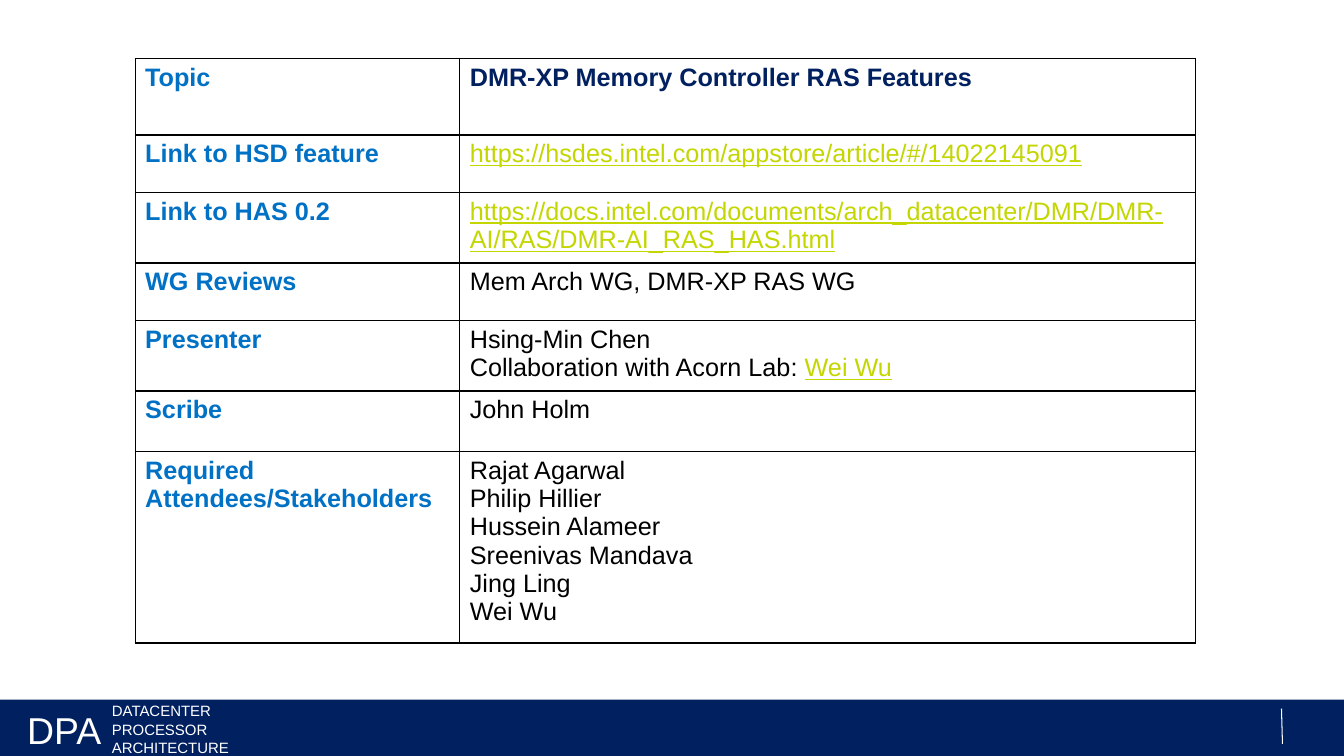
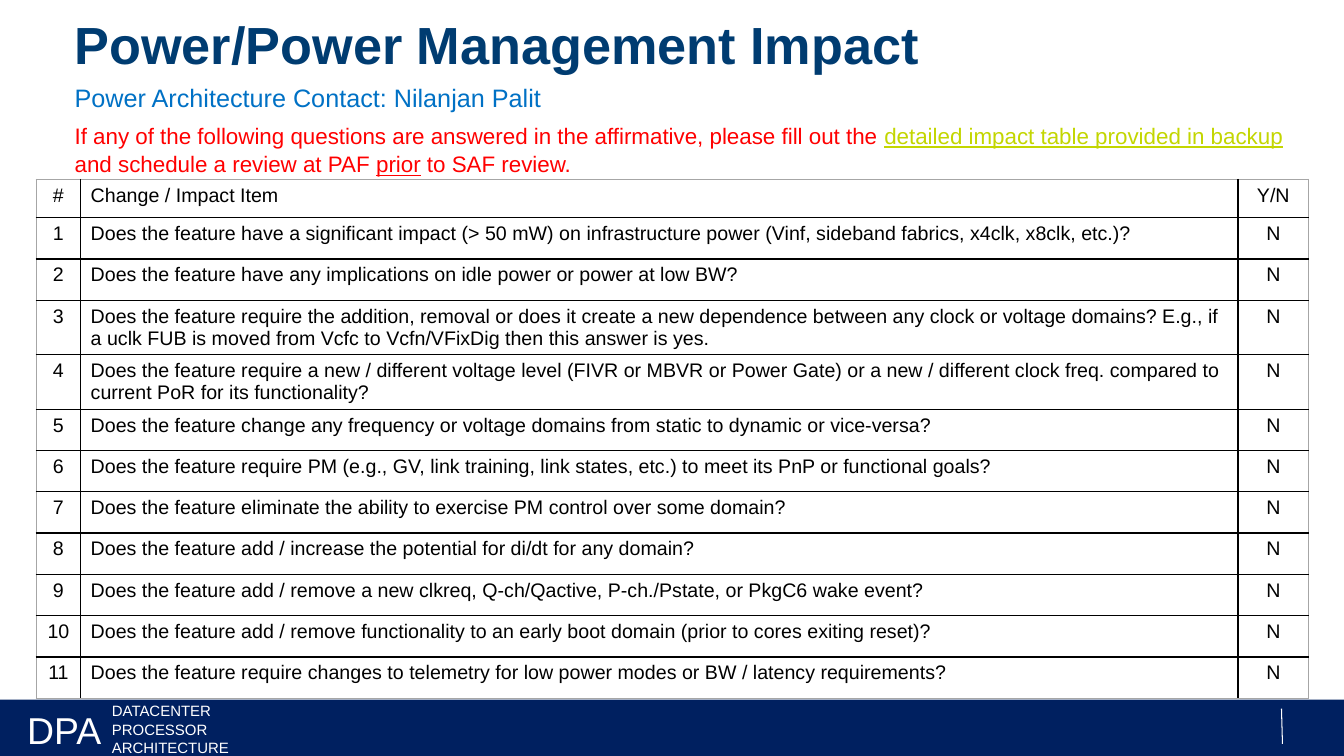
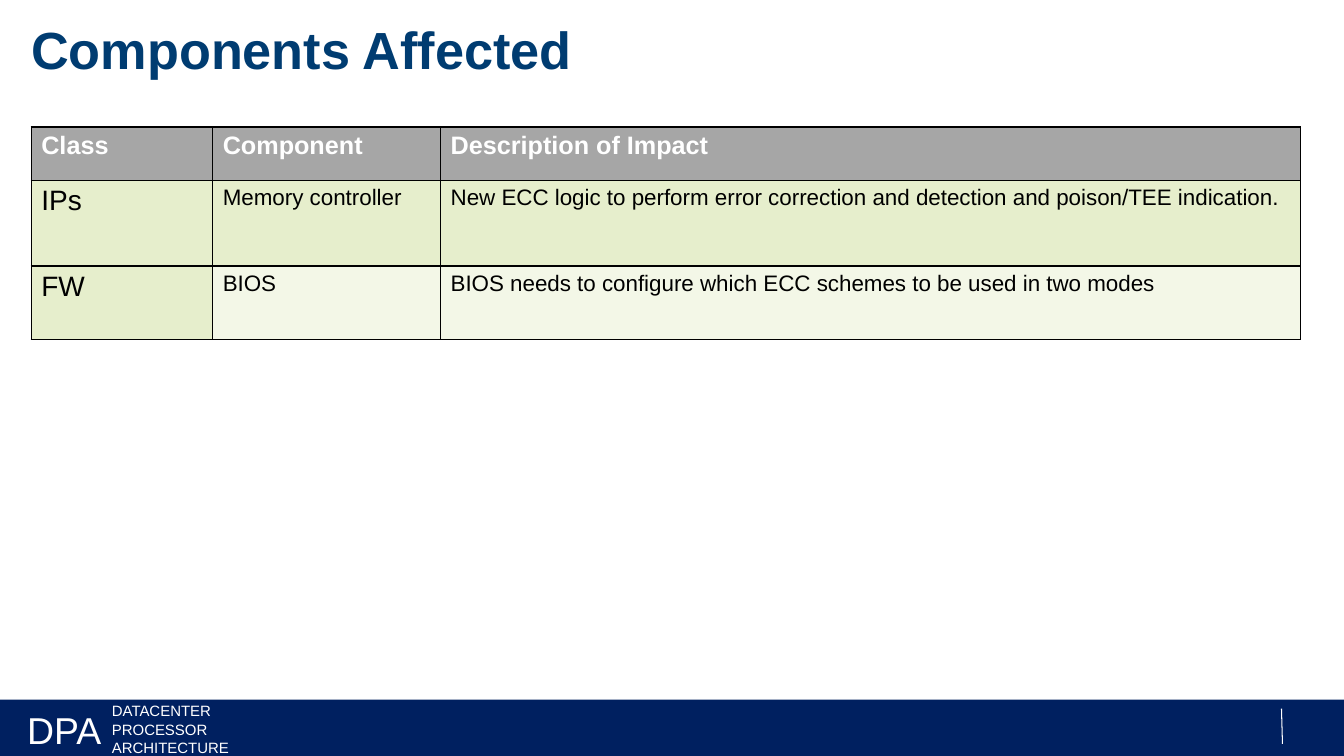
from dataclasses import dataclass

from lxml.etree import SubElement
from pptx import Presentation
from pptx.dml.color import RGBColor
from pptx.enum.shapes import MSO_CONNECTOR, MSO_SHAPE
from pptx.enum.text import MSO_ANCHOR, MSO_AUTO_SIZE, PP_ALIGN
from pptx.oxml.ns import qn
from pptx.util import Inches, Pt

WHITE = RGBColor(0xFF, 0xFF, 0xFF)
BLACK = RGBColor(0x00, 0x00, 0x00)
NAVY = RGBColor(0x00, 0x20, 0x60)
TITLE_BLUE = RGBColor(0x00, 0x3C, 0x71)
BLUE = RGBColor(0x00, 0x71, 0xC5)
RED = RGBColor(0xFF, 0x00, 0x00)
LIME = RGBColor(0xC3, 0xD6, 0x00)
GREY = RGBColor(0xA6, 0xA6, 0xA6)
GREEN = RGBColor(0xE6, 0xEE, 0xCC)
PALE_GREEN = RGBColor(0xF3, 0xF7, 0xE7)

FONT = "Arial"
LINE_SPACING = 1.05
TITLE_ONLY, TITLE_AND_BODY, BLANK = 5, 1, 6


@dataclass
class Span:
    """A stretch of text in one style."""
    text: str
    size: float = 18
    color: RGBColor = BLACK
    bold: bool = False
    underline: bool = False


@dataclass
class Cell:
    """A table cell: paragraphs of spans, alignment and fill."""
    paragraphs: list
    align: PP_ALIGN = PP_ALIGN.LEFT
    fill: RGBColor = None


class Deck:
    """Holds the shared style and the current slide."""

    def __init__(self):
        self.prs = Presentation()
        self.prs.slide_width = Inches(13.33)
        self.prs.slide_height = Inches(7.5)
        self.slide = None

    def new_slide(self, layout):
        self.slide = self.prs.slides.add_slide(self.prs.slide_layouts[layout])
        self.footer()

    def footer(self):
        shapes = self.slide.shapes
        band = shapes.add_shape(MSO_SHAPE.RECTANGLE, 0, Inches(6.94), Inches(13.33), Inches(0.56))
        band.shadow.inherit = False
        band.fill.solid()
        band.fill.fore_color.rgb = NAVY
        band.line.fill.background()
        self.label(1.11, 6.95, 1.82, 0.54, Span("DATACENTER PROCESSOR ARCHITECTURE", 10.7, WHITE))
        self.label(0.27, 6.99, 1.02, 0.45, Span("DPA", 26.7, WHITE))
        divider = shapes.add_connector(
            MSO_CONNECTOR.STRAIGHT, Inches(12.71), Inches(7.03), Inches(12.72), Inches(7.38))
        divider.line.color.rgb = WHITE
        divider.line.width = Pt(0.75)
        SubElement(divider._element.spPr, qn("a:effectLst"))

    def label(self, left, top, width, height, span):
        box = self.slide.shapes.add_textbox(Inches(left), Inches(top), Inches(width), Inches(height))
        self.set_text(self.plain(box.text_frame), [[span]], LINE_SPACING)

    def title(self, text, left, top, width, height):
        frame = self.place(self.slide.shapes.title, left, top, width, height)
        self.set_text(frame, [[Span(text, 37.3, TITLE_BLUE, bold=True)]], LINE_SPACING)

    def body(self, paragraphs, left, top, width, height):
        frame = self.place(self.slide.placeholders[1], left, top, width, height)
        self.set_text(frame, paragraphs, LINE_SPACING)
        for index, paragraph in enumerate(frame.paragraphs):
            props = paragraph._p.get_or_add_pPr()
            props.set("marL", "0")
            props.set("indent", "0")
            SubElement(props, qn("a:buNone"))
            paragraph.space_before = Pt(6 if index else 0)

    def place(self, holder, left, top, width, height):
        holder.left, holder.top = Inches(left), Inches(top)
        holder.width, holder.height = Inches(width), Inches(height)
        return self.plain(holder.text_frame)

    def plain(self, frame):
        frame.margin_left = frame.margin_right = frame.margin_top = frame.margin_bottom = 0
        frame.word_wrap = True
        frame.auto_size = MSO_AUTO_SIZE.NONE
        frame.vertical_anchor = MSO_ANCHOR.TOP
        return frame

    def set_text(self, frame, paragraphs, spacing=1.0, align=PP_ALIGN.LEFT):
        for index, spans in enumerate(paragraphs):
            paragraph = frame.add_paragraph() if index else frame.paragraphs[0]
            paragraph.alignment = align
            paragraph.line_spacing = spacing
            for span in spans:
                run = paragraph.add_run()
                run.text = span.text
                font = run.font
                font.name, font.size = FONT, Pt(span.size)
                font.bold, font.underline = span.bold, span.underline
                font.color.rgb = span.color

    def table(self, left, top, widths, heights, rows, outline=BLACK):
        table = self.slide.shapes.add_table(
            len(rows), len(widths), Inches(left), Inches(top),
            Inches(sum(widths)), Inches(sum(heights))).table
        table.first_row = table.horz_banding = False
        for column, width in zip(table.columns, widths):
            column.width = Inches(width)
        for row, height in zip(table.rows, heights):
            row.height = Inches(height)
        for r, row in enumerate(rows):
            for c, content in enumerate(row):
                cell = table.cell(r, c)
                outer = {"L": c == 0, "R": c == len(row) - 1, "T": r == 0, "B": r == len(rows) - 1}
                for side, on_edge in outer.items():
                    self.border(cell, side, outline if on_edge else BLACK)
                if content.fill is None:
                    cell.fill.background()
                else:
                    cell.fill.solid()
                    cell.fill.fore_color.rgb = content.fill
                self.set_text(cell.text_frame, content.paragraphs, align=content.align)

    def border(self, cell, side, color):
        line = SubElement(cell._tc.get_or_add_tcPr(), qn(f"a:ln{side}"), w=str(Pt(1)))
        SubElement(SubElement(line, qn("a:solidFill")), qn("a:srgbClr"), val=str(color))


def topic_slide(deck):
    """Build the review summary."""
    attendees = ["Rajat Agarwal", "Philip Hillier", "Hussein Alameer",
                 "Sreenivas Mandava", "Jing Ling", "Wei Wu"]
    has_link = "https://docs.intel.com/documents/arch_datacenter/DMR/DMR-AI/RAS/DMR-AI_RAS_HAS.html"
    hsd_link = "https://hsdes.intel.com/appstore/article/#/14022145091"
    entries = [
        ("Topic", [[Span("DMR-XP Memory Controller RAS Features", color=NAVY, bold=True)]]),
        ("Link to HSD feature", [[Span(hsd_link, color=LIME, underline=True)]]),
        ("Link to HAS 0.2", [[Span(has_link, color=LIME, underline=True)]]),
        ("WG Reviews", [[Span("Mem Arch WG, DMR-XP RAS WG")]]),
        ("Presenter", [[Span("Hsing-Min Chen")],
                       [Span("Collaboration with Acorn Lab: "),
                        Span("Wei Wu", color=LIME, underline=True)]]),
        ("Scribe", [[Span("John Holm")]]),
        ("Required Attendees/Stakeholders", [[Span(name)] for name in attendees]),
    ]
    deck.new_slide(BLANK)
    deck.table(1.34, 0.58, [3.22, 7.3], [0.76, 0.57, 0.7, 0.57, 0.7, 0.6, 1.9],
               [[Cell([[Span(heading, color=BLUE, bold=True)]]), Cell(details)]
                for heading, details in entries])


def power_slide(deck):
    """Build the power impact checklist."""
    questions = [
        "Does the feature have a significant impact (> 50 mW) on infrastructure power "
        "(Vinf, sideband fabrics, x4clk, x8clk, etc.)?",
        "Does the feature have any implications on idle power or power at low BW?",
        "Does the feature require the addition, removal or does it create a new dependence between "
        "any clock or voltage domains? E.g., if a uclk FUB is moved from Vcfc to Vcfn/VFixDig "
        "then this answer is yes.",
        "Does the feature require a new / different voltage level (FIVR or MBVR or Power Gate) or "
        "a new / different clock freq. compared to current PoR for its functionality?",
        "Does the feature change any frequency or voltage domains from static to dynamic or vice-versa?",
        "Does the feature require PM (e.g., GV, link training, link states, etc.) to meet its PnP "
        "or functional goals?",
        "Does the feature eliminate the ability to exercise PM control over some domain?",
        "Does the feature add / increase the potential for di/dt for any domain?",
        "Does the feature add / remove a new clkreq, Q-ch/Qactive, P-ch./Pstate, or PkgC6 wake event?",
        "Does the feature add / remove functionality to an early boot domain "
        "(prior to cores exiting reset)?",
        "Does the feature require changes to telemetry for low power modes or BW / latency requirements?",
    ]
    lines = [("#", "Change / Impact Item", "Y/N")]
    lines += [(str(number), question, "N") for number, question in enumerate(questions, 1)]
    aligns = [PP_ALIGN.CENTER, PP_ALIGN.LEFT, PP_ALIGN.CENTER]
    deck.new_slide(TITLE_AND_BODY)
    deck.title("Power/Power Management Impact", 0.74, 0.09, 11.86, 0.75)
    deck.body([
        [Span("Power Architecture Contact: Nilanjan Palit", color=BLUE)],
        [Span("If any of the following questions are answered in the affirmative, "
              "please fill out the ", 16, RED),
         Span("detailed impact table provided in backup", 16, LIME, underline=True),
         Span(" and schedule a review at PAF ", 16, RED),
         Span("prior", 16, RED, underline=True),
         Span(" to SAF review.", 16, RED)],
    ], 0.74, 0.8, 12.24, 6.1)
    deck.table(0.36, 1.78, [0.44, 11.48, 0.7], [0.38] + [0.41] * 2 + [0.54] * 2 + [0.41] * 7,
               [[Cell([[Span(text, 14)]], align) for text, align in zip(line, aligns)]
                for line in lines], outline=GREY)


def components_slide(deck):
    """Build the table of affected components."""
    headings = ["Class", "Component", "Description of Impact"]
    impacts = [
        ("IPs", "Memory controller",
         "New ECC logic to perform error correction and detection and poison/TEE indication.", GREEN),
        ("FW", "BIOS", "BIOS needs to configure which ECC schemes to be used in two modes", PALE_GREEN),
    ]
    rows = [[Cell([[Span(heading, color=WHITE, bold=True)]], fill=GREY) for heading in headings]]
    for group, component, impact, fill in impacts:
        rows.append([Cell([[Span(group, 20)]], fill=GREEN),
                     Cell([[Span(component, 16)]], fill=fill),
                     Cell([[Span(impact, 16)]], fill=fill)])
    deck.new_slide(TITLE_ONLY)
    deck.title("Components Affected", 0.31, 0.14, 9.01, 0.97)
    deck.table(0.31, 1.26, [1.8, 2.26, 8.53], [0.53, 0.85, 0.73], rows)


def main():
    """Build and save the deck."""
    deck = Deck()
    topic_slide(deck)
    power_slide(deck)
    components_slide(deck)
    deck.prs.save("out.pptx")


if __name__ == "__main__":
    main()
